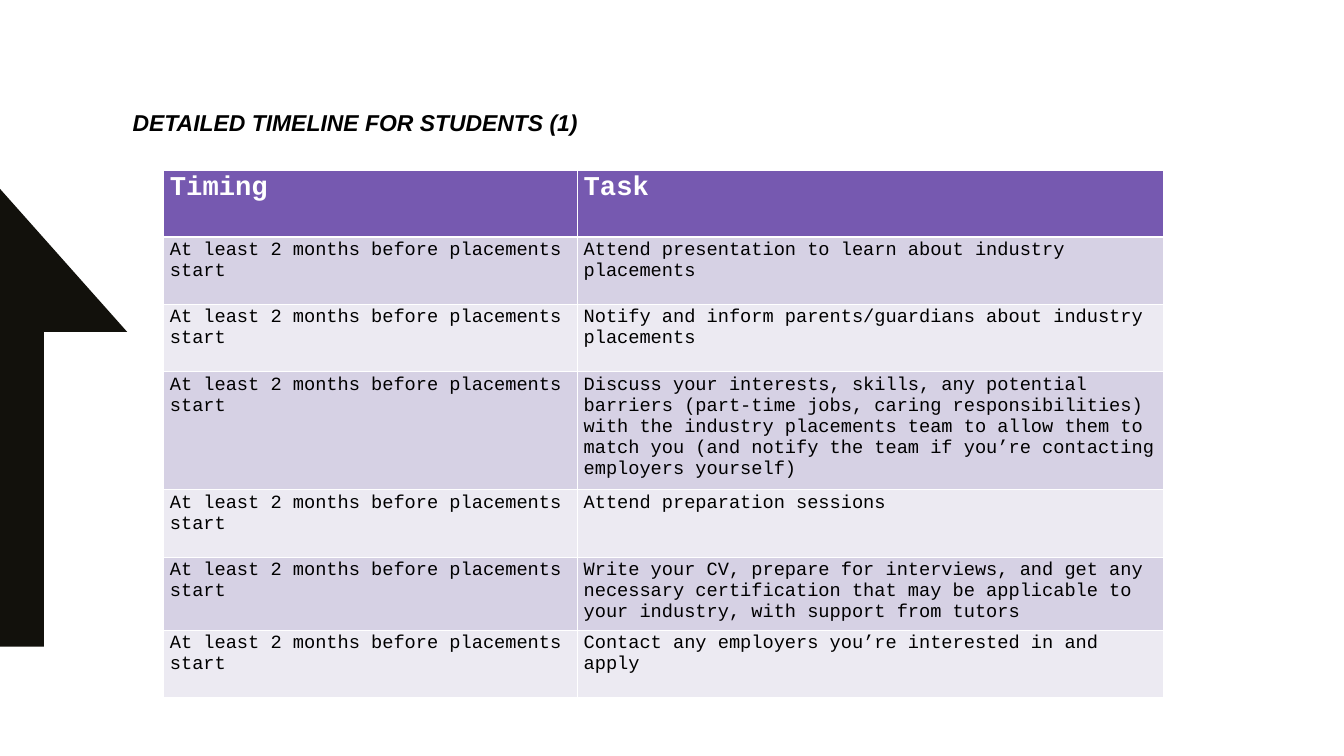
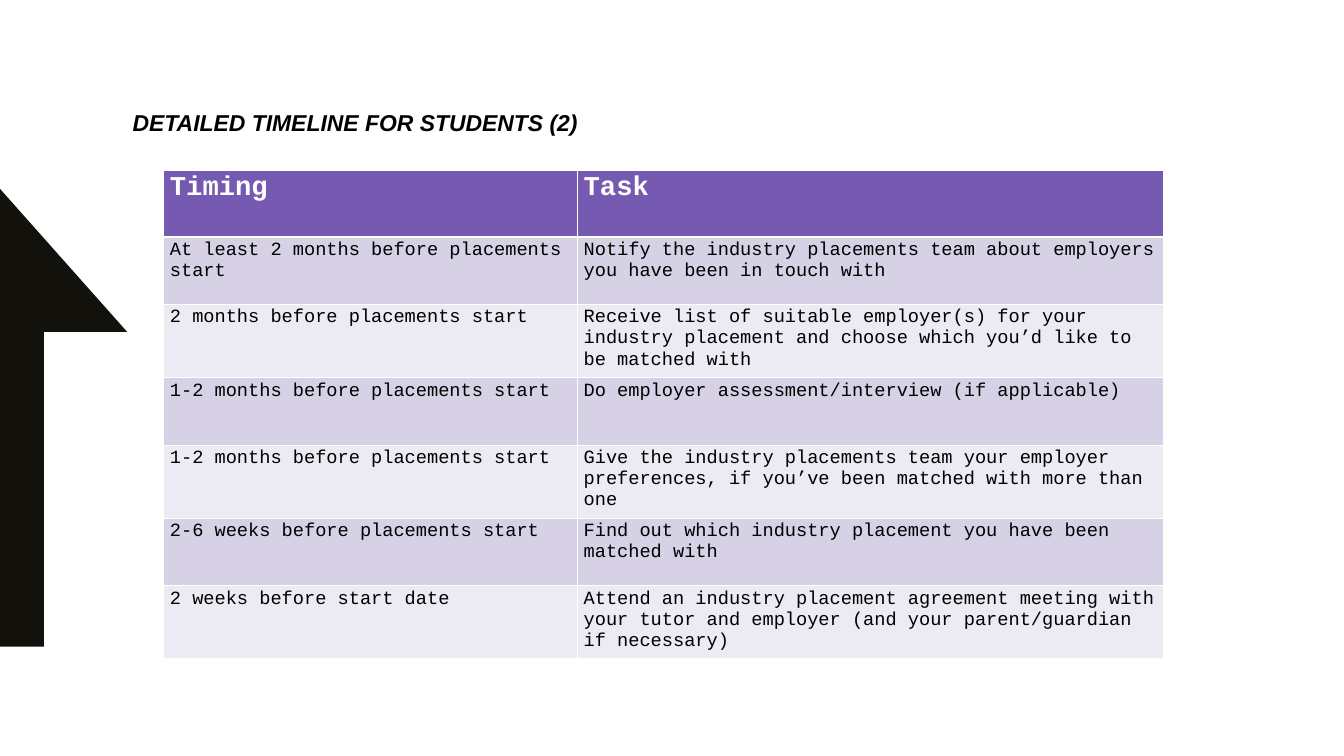
from lxml.etree import SubElement
from pptx import Presentation
from pptx.dml.color import RGBColor
from pptx.oxml import parse_xml
from pptx.oxml.ns import nsdecls
from pptx.util import Inches, Pt

HEX = {
    "arrow": "12110C",
    "head": "7659B0",
    "odd": "D6D1E4",
    "even": "ECEAF2",
    "white": "FFFFFF",
    "black": "000000",
}
EARLY = "At least 2 months before placements start"
HEAD = ("Timing", "Task")
PAGES = [
    [
        (EARLY, "Attend presentation to learn about industry placements"),
        (EARLY, "Notify and inform parents/guardians about industry placements"),
        (EARLY, "Discuss your interests, skills, any potential barriers "
                "(part-time jobs, caring responsibilities) with the industry "
                "placements team to allow them to match you (and notify the "
                "team if you’re contacting employers yourself)"),
        (EARLY, "Attend preparation sessions"),
        (EARLY, "Write your CV, prepare for interviews, and get any necessary "
                "certification that may be applicable to your industry, with "
                "support from tutors"),
        (EARLY, "Contact any employers you’re interested in and apply"),
    ],
    [
        (EARLY, "Notify the industry placements team about employers you have "
                "been in touch with"),
        ("2 months before placements start",
         "Receive list of suitable employer(s) for your industry placement "
         "and choose which you’d like to be matched with"),
        ("1-2 months before placements start",
         "Do employer assessment/interview (if applicable)"),
        ("1-2 months before placements start",
         "Give the industry placements team your employer preferences, if "
         "you’ve been matched with more than one"),
        ("2-6 weeks before placements start",
         "Find out which industry placement you have been matched with"),
        ("2 weeks before start date",
         "Attend an industry placement agreement meeting with your tutor and "
         "employer (and your parent/guardian if necessary)"),
    ],
]
ARROW = [(0, 3.09), (2.08, 5.43), (0.72, 5.43), (0.72, 10.58), (0, 10.58)]
COLS = (6.77, 9.58)
ROW = 1.1


def style(par, face, size, color, bold, slant=False):
    font = par.runs[0].font
    font.name, font.size = face, Pt(size)
    font.bold, font.italic = bold, slant
    font.color.rgb = RGBColor.from_string(HEX[color])


def edge(cell, widths):
    props = cell._tc.get_or_add_tcPr()
    for at, (side, width) in enumerate(widths.items()):
        line = parse_xml(f'<a:ln{side} {nsdecls("a")} w="{Pt(width)}"><a:solidFill>'
                         f'<a:srgbClr val="{HEX["white"]}"/></a:solidFill></a:ln{side}>')
        props.insert(at, line)


deck = Presentation()
deck.slide_width, deck.slide_height = Inches(21.99), Inches(12.37)

for num, tasks in enumerate(PAGES, 1):
    slide = deck.slides.add_slide(deck.slide_layouts[6])

    points = [(Inches(x), Inches(y)) for x, y in ARROW]
    build = slide.shapes.build_freeform(*points[0])
    build.add_line_segments(points[1:], close=True)
    arrow = build.convert_to_shape()
    arrow.shadow.inherit = False
    arrow.fill.solid()
    arrow.fill.fore_color.rgb = RGBColor.from_string(HEX["arrow"])
    arrow.line.fill.background()

    title = slide.shapes.add_textbox(Inches(2.17), Inches(1.87), Inches(17.64), Inches(0.91))
    frame = title.text_frame
    frame.word_wrap = True
    frame.margin_left = frame.margin_right = frame.margin_top = frame.margin_bottom = 0
    frame.text = f"DETAILED TIMELINE FOR STUDENTS ({num})"
    frame.paragraphs[0].line_spacing = 0.8
    style(frame.paragraphs[0], "Arial", 27, "black", True, True)

    rows = [HEAD] + tasks
    table = slide.shapes.add_table(len(rows), len(COLS), Inches(2.68), Inches(2.78),
                                   Inches(sum(COLS)), Inches(ROW * len(rows))).table
    for col, width in zip(table.columns, COLS):
        col.width = Inches(width)
    for r, texts in enumerate(rows):
        table.rows[r].height = Inches(ROW)
        fill = "head" if r == 0 else "odd" if r % 2 else "even"
        for c, text in enumerate(texts):
            cell = table.cell(r, c)
            cell.text_frame.text = text
            cell.fill.solid()
            cell.fill.fore_color.rgb = RGBColor.from_string(HEX[fill])
            edge(cell, {"L": 1, "R": 1, "T": 3 if r == 1 else 1, "B": 3 if r == 0 else 1})
            par = cell.text_frame.paragraphs[0]
            if r == 0:
                style(par, "Courier New", 32, "white", True)
            else:
                style(par, "Courier New", 22, "black", False)

deck.save("out.pptx")
